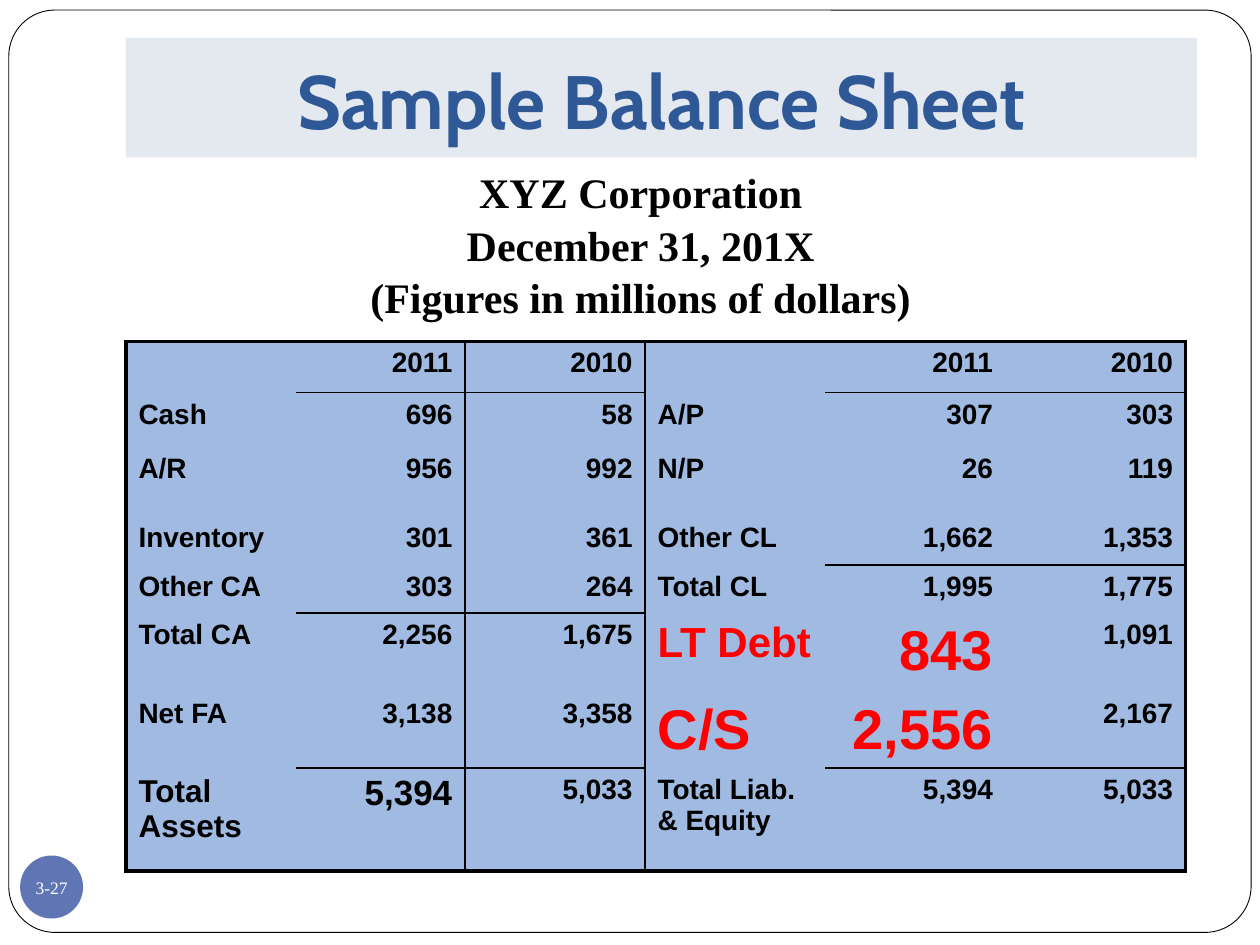
from lxml import etree
from pptx import Presentation
from pptx.dml.color import RGBColor
from pptx.enum.shapes import MSO_SHAPE
from pptx.enum.text import MSO_ANCHOR, MSO_AUTO_SIZE, PP_ALIGN
from pptx.oxml.ns import qn
from pptx.util import Inches, Pt

RECTANGLE = MSO_SHAPE.RECTANGLE
ROUNDED = MSO_SHAPE.ROUNDED_RECTANGLE
OVAL = MSO_SHAPE.OVAL
LEFT, CENTER, RIGHT = PP_ALIGN.LEFT, PP_ALIGN.CENTER, PP_ALIGN.RIGHT
MIDDLE, BOTTOM = MSO_ANCHOR.MIDDLE, MSO_ANCHOR.BOTTOM
GROW = MSO_AUTO_SIZE.SHAPE_TO_FIT_TEXT

GRID_COLUMNS, GRID_ROWS = 100, 75
BLACK, WHITE, RED = "000000", "FFFFFF", "FF0000"
THICK, THIN = 2.25, 1

BALANCE_SHEET = [
    ["", "2011", "2010", "", "2011", "2010"],
    ["Cash", "696", "58", "A/P", "307", "303"],
    ["A/R", "956", "992", "N/P", "26", "119"],
    ["Inventory", "301", "361", "Other CL", "1,662", "1,353"],
    ["Other CA", "303", "264", "Total CL", "1,995", "1,775"],
    ["Total CA", "2,256", "1,675", "LT Debt", "843", "1,091"],
    ["Net FA", "3,138", "3,358", "C/S", "2,556", "2,167"],
    ["Total Assets", "5,394", "5,033", "Total Liab. & Equity", "5,394", "5,033"],
]
COLUMN_WIDTHS = [13.5, 13.4] + [14.3] * 4
ROW_HEIGHTS = [3.9, 4.3, 5.5, 3.9, 3.8, 6.3, 5.5, 8.2]
LABEL_COLUMNS = (0, 3)
EMPHASIS = {
    (5, 3): (24, RED),
    (5, 4): (32, RED),
    (6, 3): (32, RED),
    (6, 4): (32, RED),
    (7, 0): (18, BLACK),
    (7, 1): (20, BLACK),
}
ASSETS, LIABILITIES = (1, 2), (4, 5)
COLUMN_RULES = {0: THICK, 2: THIN, 3: THIN, 6: THICK}
SUBTOTAL_RULES = {1: ASSETS + LIABILITIES, 4: LIABILITIES, 5: ASSETS, 7: ASSETS + LIABILITIES}


def color(hex_value):
    return RGBColor.from_string(hex_value)


def row_rule(boundary, column):
    if boundary in (0, len(BALANCE_SHEET)):
        return THICK
    return THIN if column in SUBTOTAL_RULES.get(boundary, ()) else None


class SlideBuilder:
    def __init__(self, presentation):
        self.slide = presentation.slides.add_slide(presentation.slide_layouts[6])
        self.unit_x = presentation.slide_width / GRID_COLUMNS
        self.unit_y = presentation.slide_height / GRID_ROWS

    def place(self, left, top, width, height):
        return (round(left * self.unit_x), round(top * self.unit_y),
                round(width * self.unit_x), round(height * self.unit_y))

    def set_lines(self, frame, lines, size, font, ink, align=CENTER, bold=True, spacing=None):
        for index, line in enumerate(lines):
            paragraph = frame.add_paragraph() if index else frame.paragraphs[0]
            paragraph.alignment = align
            paragraph.line_spacing = spacing
            run = paragraph.add_run()
            run.text = line
            for attribute, value in {"name": font, "size": Pt(size), "bold": bold}.items():
                setattr(run.font, attribute, value)
            run.font.color.rgb = color(ink)

    def panel(self, preset, area, fill, outline=None):
        shape = self.slide.shapes.add_shape(preset, *self.place(*area))
        shape.shadow.inherit = False
        shape.fill.solid()
        shape.fill.fore_color.rgb = color(fill)
        if outline:
            shape.line.color.rgb = color(outline)
            shape.line.width = Pt(0.5)
        else:
            shape.line.fill.background()
        return shape

    def label(self, shape, lines, frame_format, **style):
        for attribute, value in frame_format.items():
            setattr(shape.text_frame, attribute, value)
        self.set_lines(shape.text_frame, lines, **style)

    def text(self, area, lines, **style):
        box = self.slide.shapes.add_textbox(*self.place(*area))
        self.label(box, lines, {"word_wrap": True, "auto_size": GROW}, **style)

    def border(self, cell, side, width):
        line = etree.SubElement(cell._tc.get_or_add_tcPr(), qn(f"a:ln{side}"))
        if width is None:
            etree.SubElement(line, qn("a:noFill"))
            return
        line.set("w", str(Pt(width)))
        fill = etree.SubElement(line, qn("a:solidFill"))
        etree.SubElement(fill, qn("a:srgbClr"), val=BLACK)

    def entry(self, cell, row, column, amount):
        widths = {
            "L": COLUMN_RULES.get(column),
            "R": COLUMN_RULES.get(column + 1),
            "T": row_rule(row, column),
            "B": row_rule(row + 1, column),
        }
        for side, width in widths.items():
            self.border(cell, side, width)
        cell.fill.solid()
        cell.fill.fore_color.rgb = color("A0BAE1")
        if amount:
            size, ink = EMPHASIS.get((row, column), (16, BLACK))
            align = LEFT if column in LABEL_COLUMNS else RIGHT
            self.set_lines(cell.text_frame, [amount], size, "Arial", ink, align)
            properties = cell.text_frame.paragraphs[0]._p.get_or_add_pPr()
            before = etree.SubElement(properties, qn("a:spcBef"))
            etree.SubElement(before, qn("a:spcPct"), val="20000")

    def table(self, left, top):
        area = self.place(left, top, sum(COLUMN_WIDTHS), sum(ROW_HEIGHTS))
        table = self.slide.shapes.add_table(len(ROW_HEIGHTS), len(COLUMN_WIDTHS), *area).table
        table.first_row = table.horz_banding = False
        for column, width in zip(table.columns, COLUMN_WIDTHS):
            column.width = round(width * self.unit_x)
        for row, height in zip(table.rows, ROW_HEIGHTS):
            row.height = round(height * self.unit_y)
        for row, amounts in enumerate(BALANCE_SHEET):
            for column, amount in enumerate(amounts):
                self.entry(table.cell(row, column), row, column, amount)


def main():
    presentation = Presentation()
    presentation.slide_width, presentation.slide_height = Inches(10), Inches(7.5)
    builder = SlideBuilder(presentation)

    page_frame = builder.panel(ROUNDED, (0.7, 0.8, 98.6, 73.2), WHITE, BLACK)
    page_frame.adjustments[0] = 0.05

    page_badge = builder.panel(OVAL, (1.6, 67.9, 5, 5), "6076B4")
    margins = ("margin_left", "margin_top", "margin_right", "margin_bottom")
    badge_format = dict.fromkeys(margins, 0) | {"vertical_anchor": MIDDLE, "word_wrap": False}
    builder.label(page_badge, ["3-27"], badge_format,
                  size=10, font="Times New Roman", ink=WHITE, bold=False)

    title_band = builder.panel(RECTANGLE, (10, 3, 85, 9.5), "E4E9EF")
    title_format = {"vertical_anchor": BOTTOM, "word_wrap": True, "margin_bottom": Inches(0.1)}
    builder.label(title_band, ["Sample Balance Sheet"], title_format,
                  size=43.2, font="Cabin", ink="2F5897")

    builder.table(10, 27.1)

    statement_heading = ["XYZ Corporation", "December 31, 201X", "(Figures in millions of dollars)"]
    builder.text((19.2, 12.5, 63.3, 13.1), statement_heading,
                 size=24, font="Times New Roman", ink=BLACK, spacing=1.05)

    presentation.save("out.pptx")


if __name__ == "__main__":
    main()
